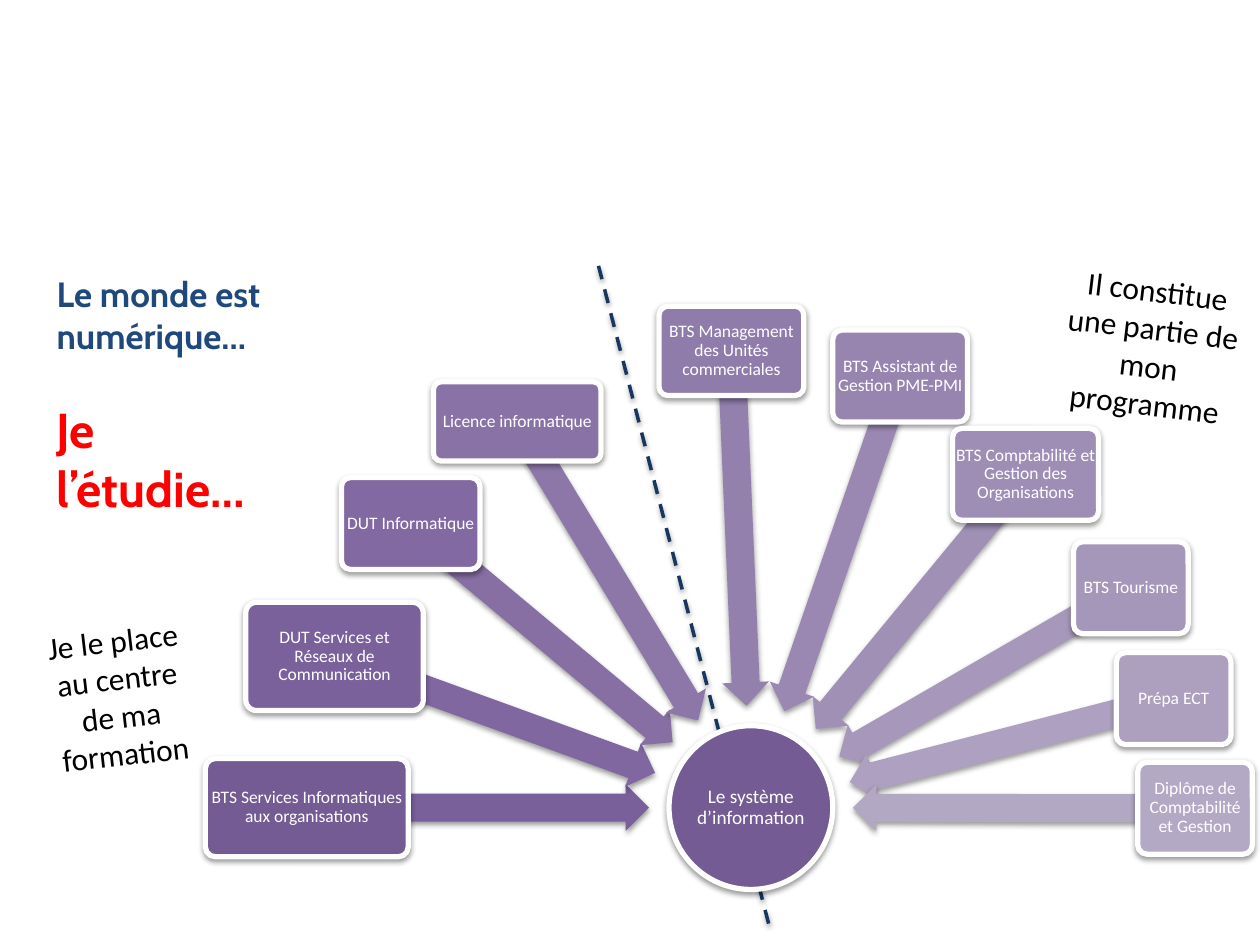
import math

import pptx
import pptx.dml.color
import pptx.enum.dml
import pptx.enum.shapes
import pptx.enum.text
import pptx.oxml
import pptx.oxml.ns
import pptx.util

EMU_PER_PX = 9144  # 100 px to the inch
SHAPE = pptx.enum.shapes.MSO_SHAPE
ALIGN = pptx.enum.text.PP_ALIGN
ANCHOR = pptx.enum.text.MSO_ANCHOR

HUB_X, HUB_Y, HUB_SIZE = 596, 641, 130
ARROW_GAP, ARROW_WIDTH = 81, 37  # distance from hub centre to tip, thickness

# label, left, top, width, height, box colour, arrow colour
COURSES = [
    ("BTS Services Informatiques aux organisations", 163, 602, 161, 78, "745B93", "7A609B"),
    ("DUT Services et Réseaux de Communication", 195, 478, 141, 86, "7B619B", "8067A0"),
    ("DUT Informatique", 271, 379, 110, 73, "8269A1", "876FA4"),
    ("Licence informatique", 344, 303, 133, 63, "8973A6", "8D77A9"),
    ("BTS Management des Unités commerciales", 523, 243, 115, 71, "907CAB", "9380AD"),
    ("BTS Assistant de Gestion PME-PMI", 661, 262, 107, 73, "9785B0", "9A88B2"),
    ("BTS Comptabilité et Gestion des Organisations", 756, 340, 116, 73, "9E8EB5", "A090B6"),
    ("BTS Tourisme", 852, 430, 91, 73, "A597BA", "A798BB"),
    ("Prépa ECT", 886, 518, 91, 73, "ADA0BF", "ADA0C0"),
    ("Diplôme de Comptabilité et Gestion", 903, 605, 91, 73, "B4A9C5", "B3A8C4"),
]


def px(length):
    return pptx.util.Emu(round(length * EMU_PER_PX))


def rgb(value):
    return pptx.dml.color.RGBColor.from_string(value)


def apply(target, values):
    for name, value in values.items():
        setattr(target, name, value)


class Sketch:
    font = "Calibri"
    title_font = "Cabin"
    white = "FFFFFF"
    black = "000000"

    def __init__(self, slide):
        self.slide = slide

    def style(self, para, size, color, **extra):
        apply(para.font, {"name": self.font, "size": pptx.util.Pt(size), **extra})
        para.font.color.rgb = rgb(color)

    def place(self, shape, left, top, width, height):
        apply(shape, {"left": px(left), "top": px(top),
                      "width": px(width), "height": px(height)})

    def shadow(self, shape):
        ns = pptx.oxml.ns.nsdecls("a")
        shape._element.spPr.append(pptx.oxml.parse_xml(
            f'<a:effectLst {ns}><a:outerShdw blurRad="40000" dist="20000" '
            'dir="5400000" rotWithShape="0"><a:srgbClr val="000000">'
            '<a:alpha val="38000"/></a:srgbClr></a:outerShdw></a:effectLst>'))

    def title(self, left, top, width, height, lines):
        title = self.slide.shapes.title
        self.place(title, left, top, width, height)
        frame = title.text_frame
        apply(frame, {"word_wrap": True, "vertical_anchor": ANCHOR.TOP,
                      "auto_size": pptx.enum.text.MSO_AUTO_SIZE.NONE})
        for index, (text, size, color, before) in enumerate(lines):
            para = frame.add_paragraph() if index else frame.paragraphs[0]
            para.text = text
            apply(para, {"alignment": ALIGN.LEFT, "space_before": pptx.util.Pt(before)})
            self.style(para, size, color, name=self.title_font, bold=True)

    def divider(self, x1, y1, x2, y2, color):
        line = self.slide.shapes.add_connector(
            pptx.enum.shapes.MSO_CONNECTOR.STRAIGHT, px(x1), px(y1), px(x2), px(y2))
        line.line.color.rgb = rgb(color)
        apply(line.line, {"width": pptx.util.Pt(2),
                          "dash_style": pptx.enum.dml.MSO_LINE.DASH})
        self.shadow(line)

    def solid(self, kind, left, top, width, height, color, adjustments=()):
        shape = self.slide.shapes.add_shape(
            kind, px(left), px(top), px(width), px(height))
        for index, value in enumerate(adjustments):
            shape.adjustments[index] = value
        shape.fill.solid()
        shape.fill.fore_color.rgb = rgb(color)
        return shape

    def node(self, kind, left, top, width, height, color, text, size, adjustments=()):
        shape = self.solid(kind, left, top, width, height, color, adjustments)
        shape.line.color.rgb = rgb(self.white)
        shape.line.width = pptx.util.Pt(3)
        self.shadow(shape)
        frame = shape.text_frame
        apply(frame, {"word_wrap": True, "vertical_anchor": ANCHOR.MIDDLE,
                      "margin_left": 0, "margin_right": 0,
                      "margin_top": px(2), "margin_bottom": px(2)})
        para = frame.paragraphs[0]
        para.text = text
        apply(para, {"alignment": ALIGN.CENTER, "line_spacing": 0.9})
        self.style(para, size, self.white)

    def arrow_to_hub(self, x, y, color):
        """Arrow from the point (x, y), ending just short of the hub."""
        angle = math.atan2(y - HUB_Y, x - HUB_X)
        length = math.hypot(x - HUB_X, y - HUB_Y) - ARROW_GAP
        reach = ARROW_GAP + length / 2
        middle_x = HUB_X + reach * math.cos(angle)
        middle_y = HUB_Y + reach * math.sin(angle)
        arrow = self.solid(SHAPE.LEFT_ARROW, middle_x - length / 2,
                           middle_y - ARROW_WIDTH / 2, length, ARROW_WIDTH,
                           color, (0.6, 0.5))
        arrow.rotation = math.degrees(angle) % 360
        arrow.line.fill.background()
        self.shadow(arrow)

    def note(self, left, top, width, height, rotation, text):
        box = self.slide.shapes.add_textbox(px(left), px(top), px(width), px(height))
        box.rotation = rotation
        apply(box.text_frame, {"word_wrap": True,
                               "auto_size": pptx.enum.text.MSO_AUTO_SIZE.SHAPE_TO_FIT_TEXT})
        para = box.text_frame.paragraphs[0]
        para.text = text
        para.alignment = ALIGN.CENTER
        self.style(para, 18, self.black)


def main():
    deck = pptx.Presentation()
    apply(deck, {"slide_width": px(1000), "slide_height": px(750)})
    sketch = Sketch(deck.slides.add_slide(deck.slide_layouts[5]))

    # Heading and dividing line
    sketch.title(35, 211, 255, 51, [
        ("Le monde est \vnumérique…", 20, "1F497D", 0),
        ("Je", 28, "FF0000", 25),
        ("l’étudie…", 28, "FF0000", 0),
    ])
    sketch.divider(610, 733, 475, 211, "17375E")

    # Hub with the courses around it
    sketch.node(SHAPE.OVAL, HUB_X - HUB_SIZE / 2, HUB_Y - HUB_SIZE / 2,
                HUB_SIZE, HUB_SIZE, "745B93", "Le système d’information", 11)
    for text, left, top, width, height, box_color, arrow_color in COURSES:
        sketch.arrow_to_hub(left + width / 2, top + height / 2, arrow_color)
        sketch.node(SHAPE.ROUNDED_RECTANGLE, left, top, width, height,
                    box_color, text, 10, (0.1,))

    # Slanted remarks
    sketch.note(22, 488, 145, 131, 353.4, "Je le place au centre de ma formation")
    sketch.note(834, 210, 159, 131, 6.8, "Il constitue une partie de mon programme")

    deck.save("out.pptx")


if __name__ == "__main__":
    main()
